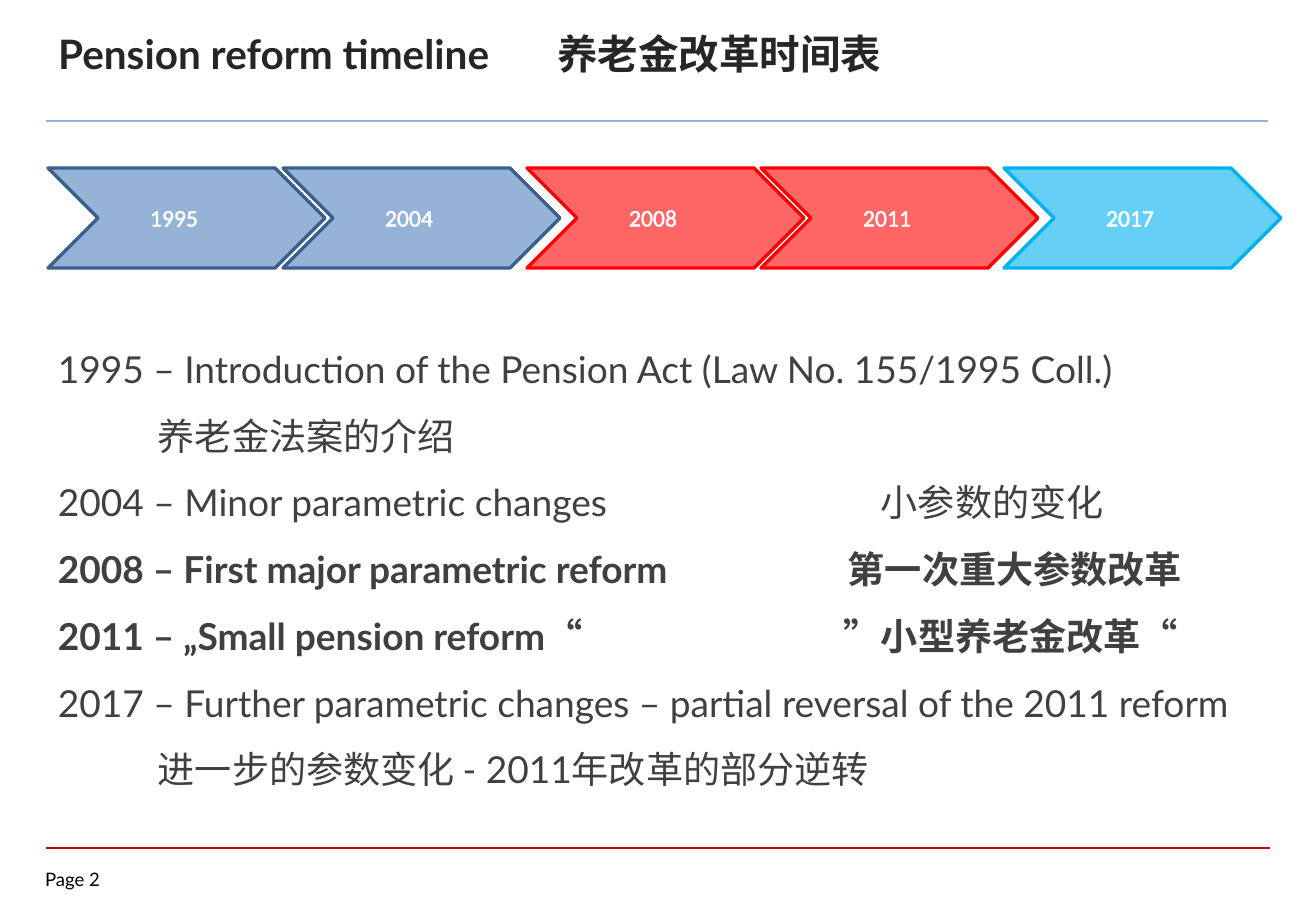
import pptx
import pptx.dml.color
import pptx.enum.shapes
import pptx.enum.text
import pptx.oxml
import pptx.oxml.ns
import pptx.util
from lxml import etree

SCALE = 914400 / 121.5
NS = pptx.oxml.ns.nsdecls("a")


def px(*lengths):
    """Turn pixel lengths into a list of EMU lengths."""
    return [pptx.util.Emu(round(length * SCALE)) for length in lengths]


def style(para, size, colour, name="Lato", bold=False, tab=None):
    """Set an optional tab stop (px), then the font of the paragraph."""
    if tab:
        para._p.get_or_add_pPr().append(pptx.oxml.parse_xml(
            f'<a:tabLst {NS}><a:tab pos="{px(tab)[0]}" algn="l"/></a:tabLst>'))
    para.font.size = pptx.util.Pt(size)
    para.font.name = name
    para.font.bold = bold
    para.font.color.rgb = pptx.dml.color.RGBColor.from_string(colour)


deck = pptx.Presentation()
deck.slide_width, deck.slide_height = px(1316, 911)
page = deck.slides.add_slide(deck.slide_layouts[5])

# Rules under the title and above the footer
for right, y, colour, width in [(1268, 121, "8EB4E3", 1.5), (1270, 848, "C00000", 1)]:
    rule = page.shapes.add_connector(
        pptx.enum.shapes.MSO_CONNECTOR.STRAIGHT, *px(46, y, right, y))
    rule.line.color.rgb = pptx.dml.color.RGBColor.from_string(colour)
    rule.line.width = pptx.util.Pt(width)
    etree.SubElement(rule._element.spPr, pptx.oxml.ns.qn("a:effectLst"))

# Title
title = page.shapes.title
title.left, title.top, title.width, title.height = px(46, 23, 919, 86)
title.text_frame.text = "Pension reform timeline\t养老金改革时间表"
title.text_frame.auto_size = pptx.enum.text.MSO_AUTO_SIZE.NONE
title.text_frame.vertical_anchor = pptx.enum.text.MSO_ANCHOR.TOP
para = title.text_frame.paragraphs[0]
para.alignment = pptx.enum.text.PP_ALIGN.LEFT
style(para, 24, "262626", bold=True, tab=499)

# Timeline chevrons
BLUE, RED, CYAN = ("4F81BD", "3A5F8C"), ("FF0000", "FF0000"), ("00B0F0", "00B0F0")
for year, left, (fill, line) in [("1995", 48, BLUE), ("2004", 283, BLUE),
                                 ("2008", 527, RED), ("2011", 761, RED),
                                 ("2017", 1004, CYAN)]:
    chevron = page.shapes.add_shape(
        pptx.enum.shapes.MSO_SHAPE.CHEVRON, *px(left, 168, 277, 100))
    chevron.shadow.inherit = False
    chevron.fill.solid()
    chevron.fill.fore_color.rgb = pptx.dml.color.RGBColor.from_string(fill)
    solid = chevron._element.spPr.find(pptx.oxml.ns.qn("a:solidFill"))
    etree.SubElement(solid[0], pptx.oxml.ns.qn("a:alpha"), val="60000")
    chevron.line.color.rgb = pptx.dml.color.RGBColor.from_string(line)
    chevron.line.width = pptx.util.Pt(2)
    frame = chevron.text_frame
    frame.margin_left, frame.margin_bottom = px(52, 8)
    frame.vertical_anchor = pptx.enum.text.MSO_ANCHOR.MIDDLE
    frame.text = year
    para = frame.paragraphs[0]
    para.alignment = pptx.enum.text.PP_ALIGN.LEFT
    style(para, 14, "FFFFFF", name="Calibri")
    para.runs[0]._r.get_or_add_rPr().insert(0, pptx.oxml.parse_xml(
        f'<a:ln {NS} w="9271"><a:solidFill><a:srgbClr val="FFFFFF"/></a:solidFill></a:ln>'))

# Reform list: text, bold, indent, tab stop
reforms = [
    ("1995 – Introduction of the Pension Act (Law No. 155/1995 Coll.)", False, 0, None),
    ("养老金法案的介绍", False, 100, None),
    ("2004 – Minor parametric changes\t小参数的变化", False, 0, 823),
    ("2008 – First major parametric reform\t第一次重大参数改革", True, 0, 790),
    ("2011 – „Small pension reform“\t”小型养老金改革“", True, 0, 786),
    ("2017 – Further parametric changes – partial reversal of the 2011 reform", False, 0, None),
    ("进一步的参数变化 - 2011年改革的部分逆转", False, 100, None),
]
frame = page.shapes.add_textbox(*px(46, 318, 1222, 502)).text_frame
frame.word_wrap = True
for index, (text, bold, indent, tab) in enumerate(reforms):
    para = frame.add_paragraph() if index else frame.paragraphs[0]
    para.text = text
    para.alignment = pptx.enum.text.PP_ALIGN.JUSTIFY
    para.line_spacing = 1.5
    para._p.get_or_add_pPr().set("marL", str(px(indent)[0]))
    style(para, 22, "404040", bold=bold, tab=tab)

# Page number
frame = page.shapes.add_textbox(*px(45, 868, 89, 27)).text_frame
frame.margin_left = frame.margin_top = frame.margin_right = frame.margin_bottom = 0
frame.word_wrap = True
frame.text = "Page 2"
style(frame.paragraphs[0], 11, "000000")

deck.save("out.pptx")
